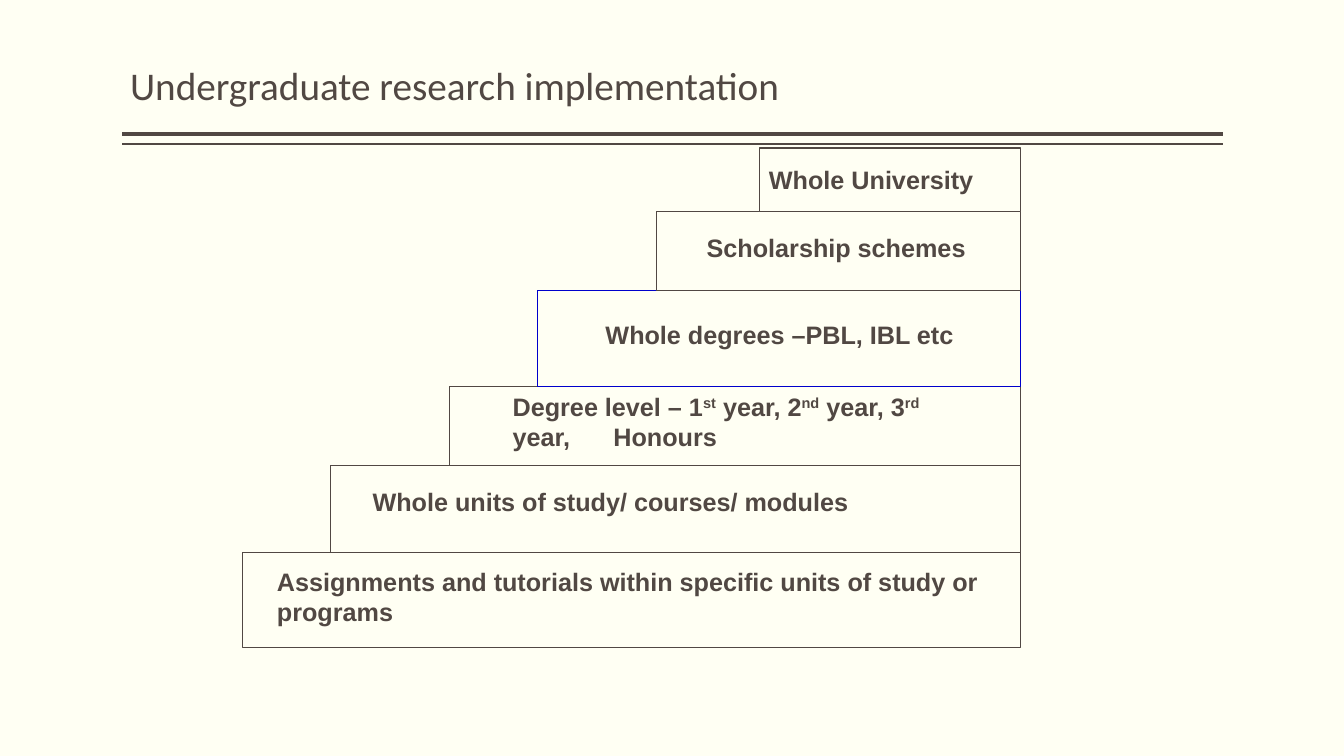
from dataclasses import dataclass

from lxml import etree
from pptx import Presentation
from pptx.dml.color import RGBColor
from pptx.enum.shapes import MSO_CONNECTOR, MSO_SHAPE
from pptx.enum.text import MSO_ANCHOR, PP_ALIGN
from pptx.oxml.ns import qn
from pptx.util import Cm, Pt

LINE, RECT = MSO_CONNECTOR.STRAIGHT, MSO_SHAPE.RECTANGLE
MIDDLE, BOTTOM = MSO_ANCHOR.MIDDLE, MSO_ANCHOR.BOTTOM
LEFT = PP_ALIGN.LEFT
CREAM = RGBColor(0xFF, 0xFF, 0xF3)
BROWN = RGBColor(0x51, 0x48, 0x43)
BLUE = RGBColor(0x00, 0x00, 0xCC)

STAIR_RIGHT = 25.73
RULE_LEFT, RULE_RIGHT = 3.07, 30.81
SUPERSCRIPT = "30000"


@dataclass
class Step:
    left: float
    top: float
    bottom: float
    color: RGBColor = BROWN


@dataclass
class Label:
    """Text with ^ around each superscript part."""
    text: str
    left: float
    top: float
    width: float
    height: float = 1.02


STEPS = [
    Step(6.12, 13.92, 16.31),
    Step(8.33, 11.73, 13.92),
    Step(11.33, 9.73, 11.73),
    Step(13.54, 7.32, 9.73, BLUE),
    Step(16.54, 5.33, 7.32),
]
TOP_STEP = Step(19.13, 3.73, 5.33)

LABELS = [
    Label("Assignments and tutorials within specific units of study or programs",
          6.73, 14.15, 18.19, 1.78),
    Label("Whole units of study/ courses/ modules", 9.14, 12.12, 14),
    Label("Degree level – 1^st^ year, 2^nd^ year, 3^rd^ year, \tHonours",
          12.67, 9.73, 11.66, 1.78),
    Label("Whole degrees –PBL, IBL etc", 15.01, 7.92, 11.13),
    Label("Scholarship schemes", 17.56, 5.72, 7.44),
]


def write(tf, text: str, font: str, size: int, bold: bool):
    """Fill the first paragraph and return it."""
    tf.word_wrap = True
    p = tf.paragraphs[0]
    p.alignment = LEFT
    p.font.name, p.font.size, p.font.bold = font, Pt(size), bold
    p.font.color.rgb = BROWN
    for i, part in enumerate(text.split("^")):
        r = p.add_run()
        r.text = part
        if i % 2:
            r.font._element.set("baseline", SUPERSCRIPT)
    return p


def add_rule(s, y: float, weight: float) -> None:
    rule = s.shapes.add_connector(LINE, Cm(RULE_RIGHT), Cm(y), Cm(RULE_LEFT), Cm(y))
    rule.line.color.rgb = BROWN
    rule.line.width = Pt(weight)
    etree.SubElement(rule._element.spPr, qn("a:effectLst"))


def add_title(s, text: str) -> None:
    tf = s.shapes.add_textbox(Cm(3.28), Cm(0.66), Cm(24.41), Cm(2.21)).text_frame
    tf.vertical_anchor = BOTTOM
    tf.margin_left = tf.margin_right = 0
    write(tf, text, "Calibri", 28, False).line_spacing = 0.9


def add_label(s, label: Label) -> None:
    tf = s.shapes.add_textbox(Cm(label.left), Cm(label.top),
                              Cm(label.width), Cm(label.height)).text_frame
    write(tf, label.text, "Arial", 18, True)


def add_step(s, step: Step):
    sp = s.shapes.add_shape(RECT, Cm(step.left), Cm(step.top),
                            Cm(STAIR_RIGHT - step.left), Cm(step.bottom - step.top))
    sp.shadow.inherit = False
    sp.fill.background()
    sp.line.color.rgb = step.color
    sp.line.width = Pt(0.75)
    return sp


def main() -> None:
    prs = Presentation()
    prs.slide_width, prs.slide_height = Cm(33.87), Cm(19.05)
    s = prs.slides.add_slide(prs.slide_layouts[6])
    s.background.fill.solid()
    s.background.fill.fore_color.rgb = CREAM

    add_rule(s, 3.38, 3)
    add_rule(s, 3.63, 1)
    add_title(s, "Undergraduate research implementation")
    for label in LABELS:
        add_label(s, label)
    for step in STEPS:
        add_step(s, step)

    university = add_step(s, TOP_STEP)
    university.fill.solid()
    university.fill.fore_color.rgb = CREAM
    university.text_frame.vertical_anchor = MIDDLE
    write(university.text_frame, "Whole University", "Arial", 18, True)

    prs.save("out.pptx")


if __name__ == "__main__":
    main()
